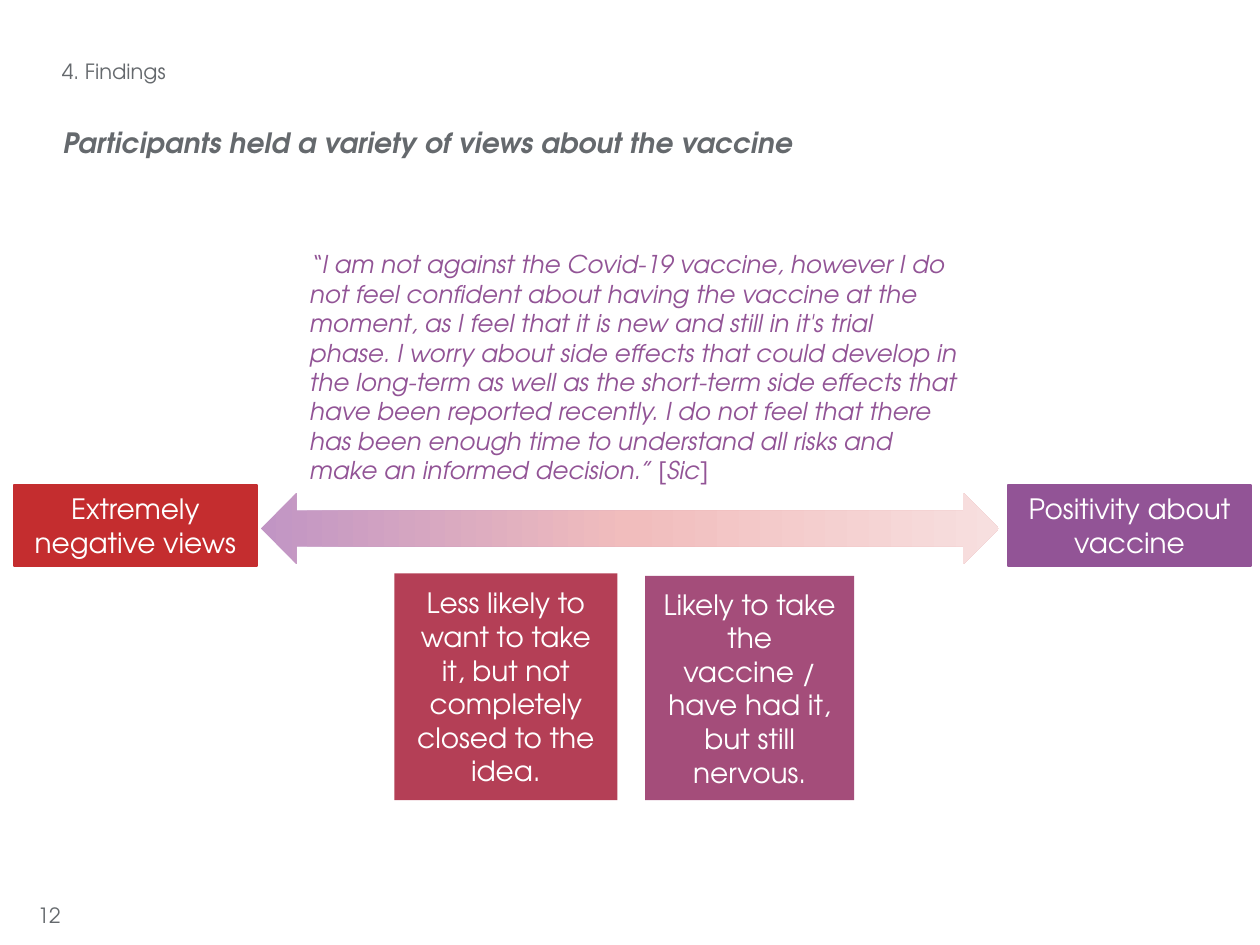
"""Build a slide showing the range of views about the vaccine."""
from dataclasses import dataclass
from typing import Optional

from lxml.etree import SubElement
from pptx import Presentation
from pptx.dml.color import RGBColor
from pptx.enum.shapes import MSO_SHAPE
from pptx.enum.text import MSO_ANCHOR, MSO_AUTO_SIZE, PP_ALIGN
from pptx.oxml.ns import qn
from pptx.util import Pt

PX = 9144
FONT = "TeX Gyre Adventor"
GREY, PURPLE, RED, WHITE = "65696D", "925496", "C42D2F", "FFFFFF"
QUOTE = (
    "“I am not against the Covid-19 vaccine, however I do not feel confident "
    "about having the vaccine at the moment, as I feel that it is new and still "
    "in it's trial phase. I worry about side effects that could develop in the "
    "long-term as well as the short-term side effects that have been reported "
    "recently. I do not feel that there has been enough time to understand all "
    "risks and make an informed decision.” [Sic]"
)


@dataclass
class Box:
    text: str
    x: int
    y: int
    w: int
    h: int
    fill: str
    line: Optional[str] = None


BOXES = [
    Box("Extremely negative views", 11, 385, 193, 64, RED, RED),
    Box("Positivity about vaccine", 800, 385, 193, 64, PURPLE, PURPLE),
    Box("Less likely to want to take it, but not completely closed to the idea.",
        313, 455, 177, 180, "B43F56"),
    Box("Likely to take the vaccine / have had it, but still nervous.",
        512, 457, 166, 178, "A44D7A"),
]


def rgb(color: str) -> RGBColor:
    return RGBColor.from_string(color)


def emu(*lengths: int) -> list[int]:
    return [n * PX for n in lengths]


def write(sp, text: str, size: int = 12, color: str = GREY, bold: bool = False,
          italic: bool = False, align=PP_ALIGN.LEFT, anchor=MSO_ANCHOR.MIDDLE,
          spacing: float = 1.0, tracking: int = 0) -> None:
    tf = sp.text_frame
    tf.word_wrap = True
    tf.auto_size = MSO_AUTO_SIZE.NONE
    tf.vertical_anchor = anchor
    p = tf.paragraphs[0]
    p.alignment = align
    p.line_spacing = spacing
    r = p.add_run()
    r.text = text
    f = r.font
    f.name, f.size, f.bold, f.italic = FONT, Pt(size), bold, italic
    f.color.rgb = rgb(color)
    if tracking:
        r._r.get_or_add_rPr().set("spc", str(tracking))


def add_text(s, text: str, x: int, y: int, w: int, h: int, **fmt) -> None:
    write(s.shapes.add_textbox(*emu(x, y, w, h)), text, **fmt)


def add_box(s, box: Box) -> None:
    sp = s.shapes.add_shape(MSO_SHAPE.RECTANGLE, *emu(box.x, box.y, box.w, box.h))
    sp.shadow.inherit = False
    sp.fill.solid()
    sp.fill.fore_color.rgb = rgb(box.fill)
    if box.line:
        sp.line.color.rgb = rgb(box.line)
        sp.line.width = Pt(1)
    else:
        sp.line.fill.background()
    write(sp, box.text, size=16, color=WHITE, align=PP_ALIGN.CENTER)


def add_arrow(s, x: int, y: int, w: int, h: int, colors: list[str]) -> None:
    sp = s.shapes.add_shape(MSO_SHAPE.LEFT_RIGHT_ARROW, *emu(x, y, w, h))
    sp.shadow.inherit = False
    sp.line.fill.background()
    sp.fill.gradient()
    sp.fill.gradient_angle = 0
    stops = sp._element.spPr.find(".//" + qn("a:gsLst"))
    for stop in list(stops):
        stops.remove(stop)
    for i, color in enumerate(colors):
        pos = 100000 * i // (len(colors) - 1)
        stop = SubElement(stops, qn("a:gs"), pos=str(pos))
        SubElement(stop, qn("a:srgbClr"), val=color)


def main() -> None:
    prs = Presentation()
    prs.slide_width, prs.slide_height = emu(1000, 750)
    s = prs.slides.add_slide(prs.slide_layouts[5])
    title = s.shapes.title
    title.left, title.top, title.width, title.height = emu(39, 41, 862, 34)
    write(title, "4. Findings", spacing=0.9)
    add_text(s, "12", 20, 706, 225, 40)
    add_text(s, "Participants held a variety of views about the vaccine",
             40, 98, 871, 48, size=16, bold=True, italic=True,
             anchor=MSO_ANCHOR.TOP, spacing=0.9, tracking=10)
    add_arrow(s, 207, 391, 586, 57, ["C195C4", "F1BDBD", "F7DFDF"])
    add_text(s, QUOTE, 236, 193, 535, 199, size=14, color=PURPLE, italic=True,
             anchor=MSO_ANCHOR.TOP)
    for box in BOXES:
        add_box(s, box)
    prs.save("out.pptx")


if __name__ == "__main__":
    main()
